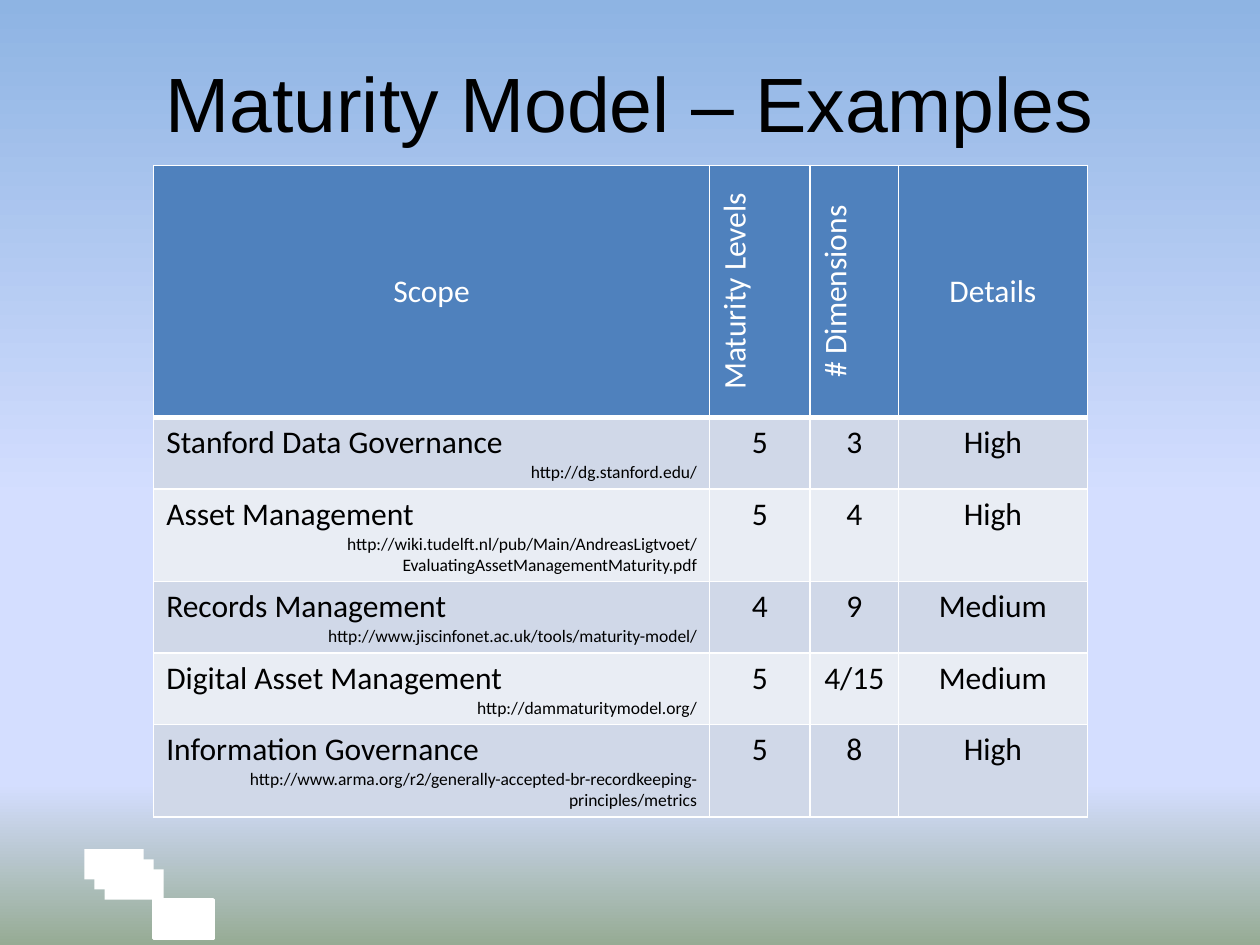
from lxml import etree
from pptx import Presentation, util as u
from pptx.dml.color import RGBColor
from pptx.enum import shapes, text
from pptx.oxml.ns import qn

theme = dict(
    black="000000", white="FFFFFF", header="4F81BD", bands=("D0D8E8", "E9EDF4"),
    sky=((0, "8EB4E3"), (53, "D4DEFF"), (83, "D4DEFF"), (100, "96AB94")),
    title_font="Arial", body_font="Calibri", title=44, body=18, link=10,
)
LEFT, CENTER, RIGHT = text.PP_ALIGN.LEFT, text.PP_ALIGN.CENTER, text.PP_ALIGN.RIGHT
MIDDLE, TOP = text.MSO_ANCHOR.MIDDLE, text.MSO_ANCHOR.TOP


def write(p, words, size=theme["body"], color=theme["black"],
          font=theme["body_font"], align=CENTER):
    p.alignment = align
    r = p.add_run()
    r.text = words
    r.font.size, r.font.name, r.font.bold = u.Pt(size), font, False
    r.font.color.rgb = RGBColor.from_string(color)


def style_cell(cell, fill, anchor, bottom=1):
    cell.vertical_anchor = anchor
    tcPr = cell._tc.get_or_add_tcPr()
    for side, width in (("L", 1), ("R", 1), ("T", 1), ("B", bottom)):
        ln = etree.SubElement(tcPr, qn(f"a:ln{side}"), w=str(u.Pt(width)))
        solid = etree.SubElement(ln, qn("a:solidFill"))
        etree.SubElement(solid, qn("a:srgbClr"), val=theme["white"])
    cell.fill.solid()
    cell.fill.fore_color.rgb = RGBColor.from_string(fill)


prs = Presentation()
prs.slide_width, prs.slide_height = W, H = u.Inches(10), u.Inches(7.5)
s = prs.slides.add_slide(prs.slide_layouts[6])

# Background: sky fading to ground
bg = s.background.fill
bg.gradient()
bg.gradient_angle = 270
stops = next(s.element.iter(qn("a:gsLst")))
for old in list(stops):
    stops.remove(old)
for pos, color in theme["sky"]:
    gs = etree.SubElement(stops, qn("a:gs"), pos=str(pos * 1000))
    etree.SubElement(gs, qn("a:srgbClr"), val=color)

# White blocks at bottom left: one outlined, then three stepping up and left
blocks = [(1.22, 7.14, 0.31, True)]
blocks += [(0.67 + 0.08 * i, 6.74 + 0.08 * i, 0.24, False) for i in (2, 1, 0)]
for x, y, height, outlined in blocks:
    sp = s.shapes.add_shape(shapes.MSO_SHAPE.RECTANGLE, int(W * x / 10), int(H * y / 7.5),
                            int(W * 0.047), int(H * height / 7.5))
    sp.shadow.inherit = False
    sp.fill.solid()
    sp.fill.fore_color.rgb = RGBColor.from_string(theme["white"])
    if outlined:
        sp.line.color.rgb = RGBColor.from_string(theme["white"])
        sp.line.width = u.Pt(2)
    else:
        sp.line.fill.background()

# Title
tf = s.shapes.add_textbox(int(W * 0.05), int(H * 0.04), int(W * 0.9), int(H * 0.135)).text_frame
tf.word_wrap = True
tf.vertical_anchor = MIDDLE
write(tf.paragraphs[0], "Maturity Model – Examples", size=theme["title"],
      font=theme["title_font"])

# Table of maturity models
headers = ("Scope", "Maturity Levels", "# Dimensions", "Details")
models = (
    ("Stanford Data Governance", "http://dg.stanford.edu/", "5", "3", "High"),
    ("Asset Management",
     "http://wiki.tudelft.nl/pub/Main/AndreasLigtvoet/EvaluatingAssetManagementMaturity.pdf",
     "5", "4", "High"),
    ("Records Management", "http://www.jiscinfonet.ac.uk/tools/maturity-model/",
     "4", "9", "Medium"),
    ("Digital Asset Management", "http://dammaturitymodel.org/", "5", "4/15", "Medium"),
    ("Information Governance",
     "http://www.arma.org/r2/generally-accepted-br-recordkeeping-principles/metrics",
     "5", "8", "High"),
)
columns = (4.41, 0.8, 0.7, 1.5)
rows = (2,) + (0.41,) * len(models)
table = s.shapes.add_table(len(rows), len(columns), int(W * 0.122), int(H * 0.175),
                           u.Inches(sum(columns)), u.Inches(sum(rows))).table
for column, width in zip(table.columns, columns):
    column.width = u.Inches(width)
for row, height in zip(table.rows, rows):
    row.height = u.Inches(height)

# Header row, with the two narrow columns turned upwards
for c, label in enumerate(headers):
    cell = table.cell(0, c)
    style_cell(cell, theme["header"], MIDDLE, bottom=3)
    write(cell.text_frame.paragraphs[0], label, color=theme["white"])
    if c in (1, 2):
        cell._tc.get_or_add_tcPr().set("vert", "vert270")

# Body rows: name over its link, then the ratings
for i, (name, link, *ratings) in enumerate(models):
    for c, words in enumerate([name] + ratings):
        cell = table.cell(i + 1, c)
        style_cell(cell, theme["bands"][i % 2], TOP, bottom=1)
        tf = cell.text_frame
        write(tf.paragraphs[0], words, align=CENTER if c else LEFT)
        if c == 0:
            write(tf.add_paragraph(), link, size=theme["link"], align=RIGHT)

prs.save("out.pptx")
